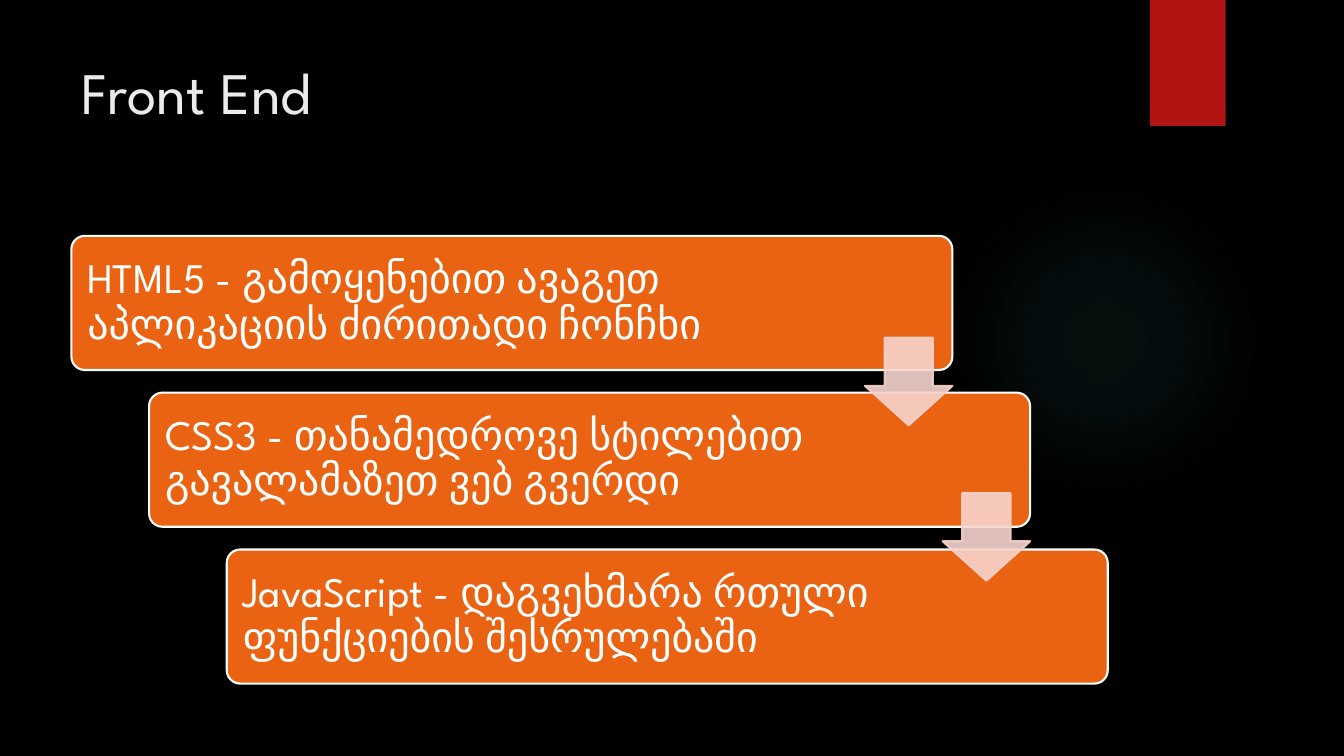
from dataclasses import dataclass

from lxml.etree import SubElement
from pptx import Presentation
from pptx.dml.color import RGBColor
from pptx.enum.shapes import MSO_SHAPE
from pptx.enum.text import MSO_ANCHOR, PP_ALIGN
from pptx.oxml import parse_xml
from pptx.oxml.ns import nsdecls, qn
from pptx.shapes.autoshape import Shape
from pptx.slide import Slide
from pptx.util import Pt


@dataclass(frozen=True)
class Theme:
    background: str = "000000"
    glow: str = "50B9C1"
    ribbon: str = "B01513"
    title: str = "EBEBEB"
    step: str = "EA6312"
    step_text: str = "FFFFFF"
    arrow: str = "F7D3CC"
    arrow_opacity: int = 90
    font: str = "League Spartan"
    title_size: float = 42
    step_size: float = 30
    outline: float = 1.5


@dataclass(frozen=True)
class Box:
    left: float
    top: float
    width: float
    height: float

    def moved(self, right: float, down: float) -> "Box":
        return Box(self.left + right, self.top + down, self.width, self.height)

    def lengths(self) -> tuple[Pt, Pt, Pt, Pt]:
        return Pt(self.left), Pt(self.top), Pt(self.width), Pt(self.height)


@dataclass(frozen=True)
class Step:
    text: str
    right_inset: float


THEME = Theme()
GLOW_BOX = Box(677.5, 131.8, 221.8, 221.8)
RIBBON_BOX = Box(821.5, 0, 54, 90)
TITLE_BOX = Box(51, 36, 741, 110)
FIRST_STEP_BOX = Box(51, 168.5, 629.3, 95.8)
FIRST_ARROW_BOX = Box(617.8, 241.2, 62.6, 62.6)
STEP_RIGHT, STEP_DOWN, ARROW_DOWN = 55.5, 112, 111
STEP_INSET = 8.64

STEPS = [
    Step("HTML5 - გამოყენებით ავაგეთ აპლიკაციის ძირითადი ჩონჩხი", 106),
    Step("CSS3 - თანამედროვე სტილებით გავალამაზეთ ვებ გვერდი", 126),
    Step("JavaScript - დაგვეხმარა რთული ფუნქციების შესრულებაში", 126),
]


def color(value: str) -> RGBColor:
    return RGBColor.from_string(value)


def add_filled(slide: Slide, kind: MSO_SHAPE, box: Box, fill: str, line: str | None = None) -> Shape:
    shape = slide.shapes.add_shape(kind, *box.lengths())
    shape.shadow.inherit = False
    shape.fill.solid()
    shape.fill.fore_color.rgb = color(fill)
    if line is None:
        shape.line.fill.background()
    else:
        shape.line.color.rgb = color(line)
        shape.line.width = Pt(THEME.outline)
    return shape


def add_glow(slide: Slide) -> None:
    shape = add_filled(slide, MSO_SHAPE.OVAL, GLOW_BOX, THEME.glow)
    stops = "".join(
        f'<a:gs pos="{position * 1000}"><a:srgbClr val="{THEME.glow}">'
        f'<a:alpha val="{opacity * 1000}"/></a:srgbClr></a:gs>'
        for position, opacity in [(0, 7), (36, 6), (69, 0)]
    )
    gradient = parse_xml(
        f'<a:gradFill {nsdecls("a")}><a:gsLst>{stops}</a:gsLst><a:path path="circle">'
        '<a:fillToRect l="50000" t="50000" r="50000" b="50000"/></a:path></a:gradFill>'
    )
    properties = shape.element.spPr
    properties.replace(properties.find(qn("a:solidFill")), gradient)


def add_text(shape: Shape, text: str, size: float, text_color: str) -> None:
    frame = shape.text_frame
    frame.word_wrap = True
    paragraph = frame.paragraphs[0]
    paragraph.text = text
    paragraph.alignment = PP_ALIGN.LEFT
    paragraph.font.name = THEME.font
    paragraph.font.size = Pt(size)
    paragraph.font.color.rgb = color(text_color)


def add_title(slide: Slide, text: str) -> None:
    shape = slide.shapes.add_textbox(*TITLE_BOX.lengths())
    add_text(shape, text, THEME.title_size, THEME.title)
    shape.text_frame.vertical_anchor = MSO_ANCHOR.TOP


def add_step(slide: Slide, step: Step, box: Box) -> None:
    shape = add_filled(slide, MSO_SHAPE.ROUNDED_RECTANGLE, box, THEME.step, THEME.step_text)
    shape.adjustments[0] = 0.1
    add_text(shape, step.text, THEME.step_size, THEME.step_text)
    frame = shape.text_frame
    frame.vertical_anchor = MSO_ANCHOR.MIDDLE
    frame.margin_left = frame.margin_top = frame.margin_bottom = Pt(STEP_INSET)
    frame.margin_right = Pt(step.right_inset)
    frame.paragraphs[0].line_spacing = 0.9


def add_arrow(slide: Slide, box: Box) -> None:
    shape = add_filled(slide, MSO_SHAPE.DOWN_ARROW, box, THEME.arrow, THEME.arrow)
    shape.adjustments[0] = 0.55
    shape.adjustments[1] = 0.45
    for color_element in shape.element.spPr.iter(qn("a:srgbClr")):
        SubElement(color_element, qn("a:alpha"), val=str(THEME.arrow_opacity * 1000))


def main() -> None:
    presentation = Presentation()
    presentation.slide_width, presentation.slide_height = Pt(960), Pt(540)
    slide = presentation.slides.add_slide(presentation.slide_layouts[6])

    # Backdrop
    slide.background.fill.solid()
    slide.background.fill.fore_color.rgb = color(THEME.background)
    add_glow(slide)
    add_filled(slide, MSO_SHAPE.RECTANGLE, RIBBON_BOX, THEME.ribbon)

    # Title
    add_title(slide, "Front End")

    # Staircase of steps, then the arrows that join them
    for index, step in enumerate(STEPS):
        add_step(slide, step, FIRST_STEP_BOX.moved(index * STEP_RIGHT, index * STEP_DOWN))
    for index in range(len(STEPS) - 1):
        add_arrow(slide, FIRST_ARROW_BOX.moved(index * STEP_RIGHT, index * ARROW_DOWN))

    presentation.save("out.pptx")


if __name__ == "__main__":
    main()
